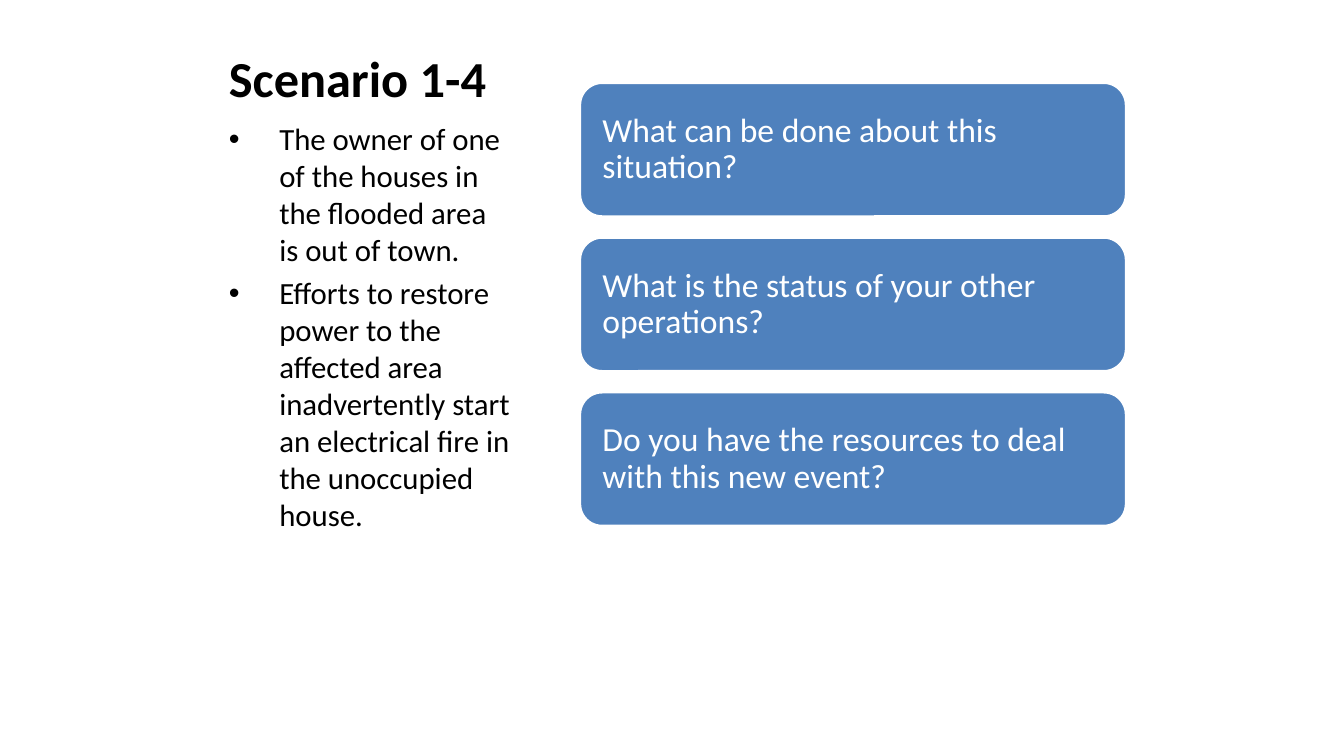
from dataclasses import dataclass
from typing import Any

from lxml import etree
from pptx import Presentation
from pptx import util as u
from pptx.dml.color import RGBColor
from pptx.enum import shapes, text
from pptx.oxml.ns import qn


@dataclass
class Card:
    label: str
    top: float


LEFT, WIDTH, HEIGHT = 5.75, 5.42, 1.33
TOP, STEP = 0.82, 1.535
ASKS = [
    "What can be done about this situation?",
    "What is the status of your other operations?",
    "Do you have the resources to deal with this new event?",
]
CARDS = [Card(ask, TOP + i * STEP) for i, ask in enumerate(ASKS)]
FACTS = [
    "The owner of one of the houses in the flooded area is out of town.",
    "Efforts to restore power to the affected area inadvertently start "
    "an electrical fire in the unoccupied house.",
]


def color(code: str) -> RGBColor:
    return RGBColor.from_string(code)


def apply(item: Any, form: dict[str, Any]) -> None:
    for name, value in form.items():
        setattr(item, name, value)


def place(shape: Any, left: float, top: float, width: float, height: float) -> None:
    apply(shape, {"left": u.Inches(left), "top": u.Inches(top),
                  "width": u.Inches(width), "height": u.Inches(height)})


def style(par: Any, size: float, code: str, bold: bool = False) -> None:
    par.alignment = text.PP_ALIGN.LEFT
    apply(par.font, {"name": "Calibri", "size": u.Pt(size), "bold": bold})
    par.font.color.rgb = color(code)


def bullet(par: Any) -> None:
    props = par._p.get_or_add_pPr()
    props.set("marL", str(u.Inches(0.5)))
    props.set("indent", str(u.Inches(-0.5)))
    font = etree.SubElement(props, qn("a:buFont"))
    font.set("typeface", "Arial")
    mark = etree.SubElement(props, qn("a:buChar"))
    mark.set("char", "•")


def add_title(slide: Any) -> None:
    title = slide.shapes.title
    place(title, 2.17, 0.3, 3.29, 1.27)
    frame = title.text_frame
    frame.text = "Scenario 1-4"
    apply(frame, {"vertical_anchor": text.MSO_ANCHOR.BOTTOM, "word_wrap": True,
                  "auto_size": text.MSO_AUTO_SIZE.NONE,
                  "margin_bottom": u.Inches(0.5)})
    style(frame.paragraphs[0], 36, "000000", True)


def add_facts(slide: Any) -> None:
    body = slide.placeholders[1]
    place(body, 2.17, 1.14, 3, 4.77)
    frame = body.text_frame
    frame.text = "\n".join(FACTS)
    apply(frame, {"auto_size": text.MSO_AUTO_SIZE.NONE, "word_wrap": True,
                  "vertical_anchor": text.MSO_ANCHOR.TOP})
    for i, par in enumerate(frame.paragraphs):
        bullet(par)
        par.space_before = u.Pt(4.4 if i else 0)
        style(par, 22, "000000")


def add_card(slide: Any, card: Card) -> None:
    box = slide.shapes.add_shape(shapes.MSO_SHAPE.ROUNDED_RECTANGLE, 0, 0, 0, 0)
    place(box, LEFT, card.top, WIDTH, HEIGHT)
    box.shadow.inherit = False
    box.fill.solid()
    box.fill.fore_color.rgb = color("4F81BD")
    box.line.color.rgb = color("FFFFFF")
    box.line.width = u.Pt(2)
    frame = box.text_frame
    frame.text = card.label
    gap = u.Inches(0.16)
    apply(frame, {"word_wrap": True, "vertical_anchor": text.MSO_ANCHOR.MIDDLE,
                  "margin_left": gap, "margin_right": gap,
                  "margin_top": gap, "margin_bottom": gap})
    par = frame.paragraphs[0]
    par.line_spacing = 0.9
    style(par, 24, "FFFFFF")


def main() -> None:
    deck = Presentation()
    apply(deck, {"slide_width": u.Inches(13.33), "slide_height": u.Inches(7.5)})
    slide = deck.slides.add_slide(deck.slide_layouts[1])

    # Scenario on the left
    add_title(slide)
    add_facts(slide)

    # Questions on the right
    for card in CARDS:
        add_card(slide, card)

    deck.save("out.pptx")


if __name__ == "__main__":
    main()
